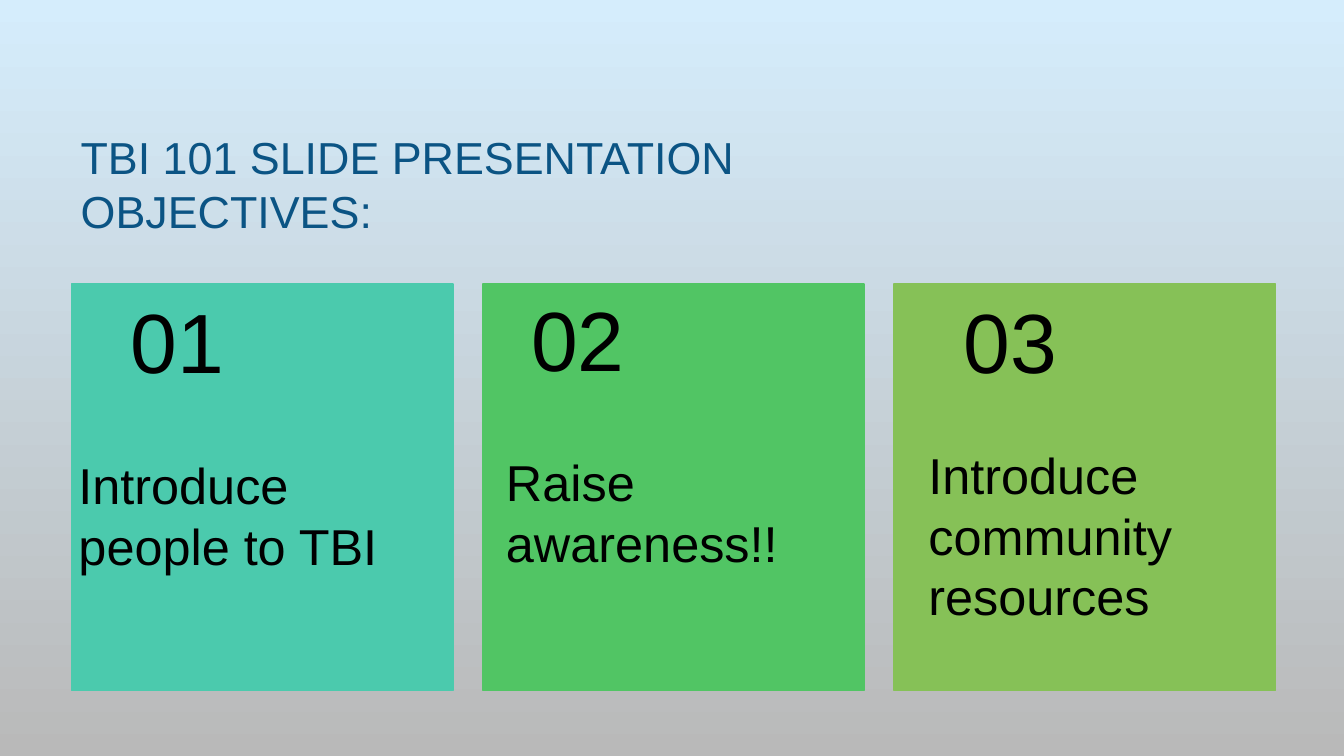
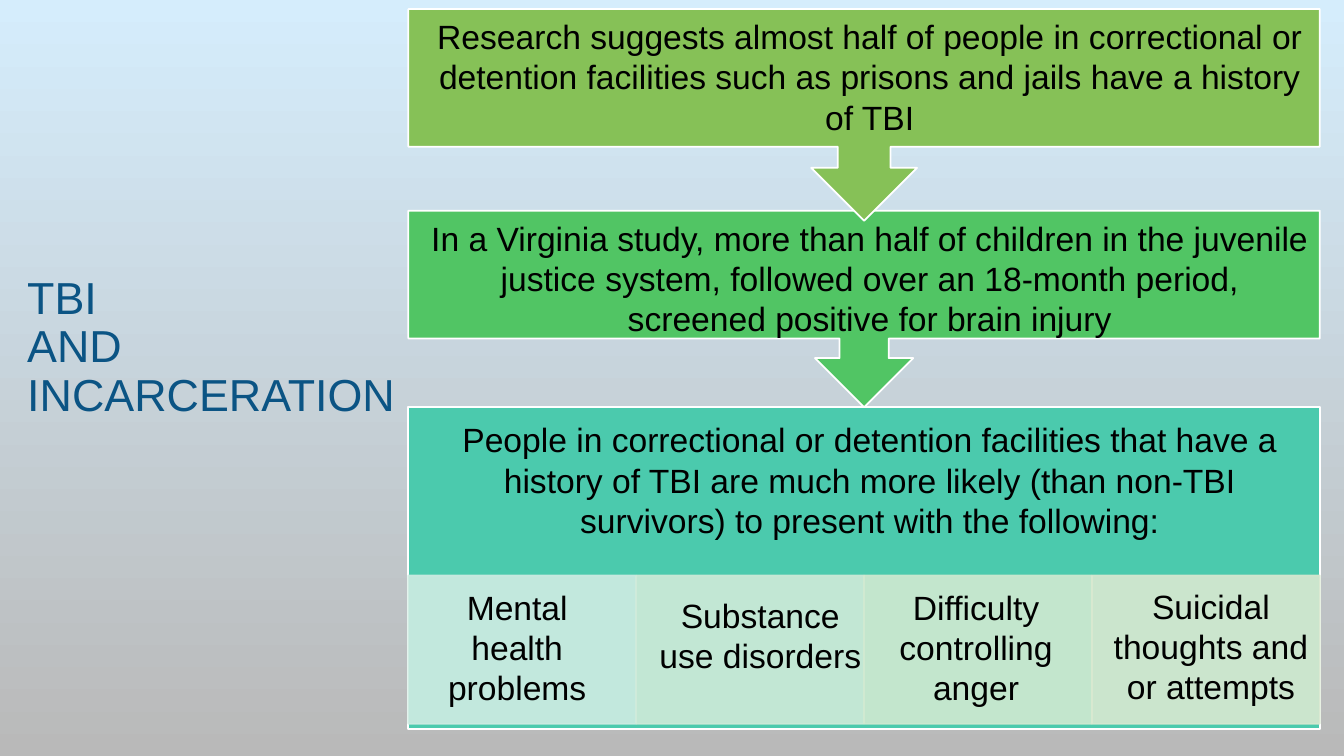
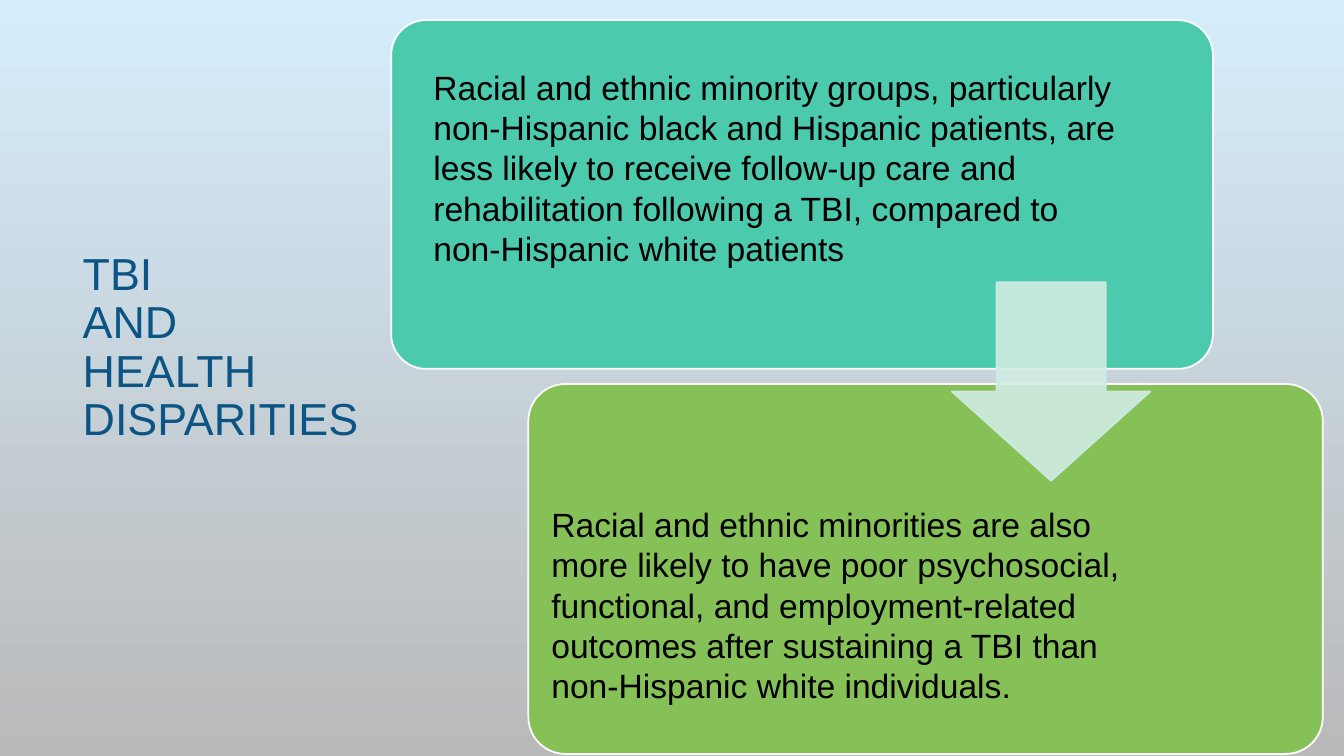
import pptx
import pptx.util
import pptx.dml.color
import pptx.enum.shapes
import pptx.enum.text
import pptx.oxml.ns
import lxml.etree

Inches, Pt = pptx.util.Inches, pptx.util.Pt
SHAPE = pptx.enum.shapes.MSO_SHAPE
ALIGN = pptx.enum.text.PP_ALIGN
ANCHOR = pptx.enum.text.MSO_ANCHOR
AUTO = pptx.enum.text.MSO_AUTO_SIZE

# Shared style
FONT = "Arial"
BLUE, BLACK, WHITE = "0B5484", "000000", "FFFFFF"
TEAL, GREEN, LIME = "4BCAAD", "51C564", "86C157"
PALE_TEAL = "D0ECE3"
SKY, GREY = "D5EDFC", "B9B9B9"

# Slide 1: colour, number, number position and width, goal, goal position and width
OBJECTIVES_TITLE = "TBI 101 SLIDE PRESENTATION\nOBJECTIVES:"
OBJECTIVES = [
    (TEAL, "01", (1.2, 2.82, 3.31), "Introduce people to TBI", (0.68, 4.46, 3.78)),
    (GREEN, "02", (5.17, 2.8, 3.69), "Raise awareness!!", (4.92, 4.43, 3.5)),
    (LIME, "03", (9.46, 2.82, 2.97), "Introduce community resources", (9.11, 4.36, 3.33)),
]

# Slide 2
INCARCERATION_TITLE = "TBI\vAND\vINCARCERATION"
FINDINGS = [
    "Research suggests almost half of people in correctional or detention facilities "
    "such as prisons and jails have a history of TBI",
    "In a Virginia study, more than half of children in the juvenile justice system, "
    "followed over an 18-month period, screened positive for brain injury",
    "People in correctional or detention facilities that have a history of TBI are much "
    "more likely (than non-TBI survivors) to present with the following:",
]
CALLOUTS = [(GREEN, 2.09, 1.95), (LIME, 0.09, 2.1)]  # colour, top, height
RISKS = [  # colour, text, text box (left, top, width, height)
    (PALE_TEAL, "Mental health problems", (4.15, 5.77, 1.96, 1.31)),
    ("D0EBD9", "Substance use disorders", (6.38, 5.85, 2.32, 0.91)),
    ("D1EAD1", "Difficulty controlling anger", (8.62, 5.77, 2.12, 1.31)),
    ("D9E9D1", "Suicidal thoughts and or attempts", (10.79, 5.76, 2.44, 1.31)),
]

# Slide 3: colour, panel box, text, text box
DISPARITIES_TITLE = "TBI\vAND\vHEALTH DISPARITIES"
DISPARITIES = [
    (TEAL, (3.88, 0.2, 8.15, 3.46),
     "Racial and ethnic minority groups, particularly non-Hispanic black and Hispanic "
     "patients, are less likely to receive follow-up care and rehabilitation following "
     "a TBI, compared to non-Hispanic white patients", (4.2, 0.61, 6.98, 2.12)),
    (LIME, (5.24, 3.81, 7.88, 3.67),
     "Racial and ethnic minorities are also more likely to have poor psychosocial, "
     "functional, and employment-related outcomes after sustaining a TBI than "
     "non-Hispanic white individuals.", (5.37, 4.95, 6.22, 2.12)),
]


def rgb(color):
    return pptx.dml.color.RGBColor.from_string(color)


def style_text(tf, size, color, align=ALIGN.LEFT, spacing=None):
    tf.word_wrap = True
    for p in tf.paragraphs:
        p.alignment = align
        if spacing:
            p.line_spacing = spacing
        for r in p.runs:
            r.font.name, r.font.size = FONT, Pt(size)
            r.font.color.rgb = rgb(color)


def add_titled_slide(prs, title, box, anchor=ANCHOR.MIDDLE, spacing=0.9):
    s = prs.slides.add_slide(prs.slide_layouts[5])
    sp = s.shapes.title
    sp.left, sp.top, sp.width, sp.height = map(Inches, box)
    tf = sp.text_frame
    tf.text = title
    tf.auto_size, tf.vertical_anchor = AUTO.NONE, anchor
    style_text(tf, 32, BLUE, spacing=spacing)
    return s


def add_text(s, text, box, size=24, align=ALIGN.LEFT):
    tf = s.shapes.add_textbox(*map(Inches, box)).text_frame
    tf.text = text
    tf.auto_size = AUTO.SHAPE_TO_FIT_TEXT
    style_text(tf, size, BLACK, align)


def add_block(s, kind, box, fill, line=WHITE, opacity=100):
    sp = s.shapes.add_shape(kind, *map(Inches, box))
    sp.shadow.inherit = False
    sp.fill.solid()
    sp.fill.fore_color.rgb = rgb(fill)
    sp.line.color.rgb = rgb(line)
    sp.line.width = Pt(1.25)
    if opacity < 100:
        qn = pptx.oxml.ns.qn
        for clr in sp.element.spPr.iter(qn("a:srgbClr")):
            lxml.etree.SubElement(clr, qn("a:alpha")).set("val", str(opacity * 1000))
    return sp


def set_background(prs):
    fill = prs.slide_master.background.fill
    fill.gradient()
    fill.gradient_angle = 270
    for stop, position, color in zip(fill.gradient_stops, (0, 1), (SKY, GREY)):
        stop.position = position
        stop.color.rgb = rgb(color)


def build_objectives(prs):
    s = add_titled_slide(prs, OBJECTIVES_TITLE, (0.7, 1.24, 11.12, 1.18), ANCHOR.TOP, 1.0)
    for i, (color, *_) in enumerate(OBJECTIVES):
        add_block(s, SHAPE.RECTANGLE, (0.71 + i * 4.08, 2.82, 3.78, 4.03), color, color)
    for _, number, number_box, goal, goal_box in OBJECTIVES:
        add_text(s, number, (*number_box, 1.1), 60)
        add_text(s, goal, (*goal_box, 1.31), 36)


def build_incarceration(prs):
    s = add_titled_slide(prs, INCARCERATION_TITLE, (0.17, 0.47, 4.07, 5.97))
    left, width = 4.05, 9.04
    add_block(s, SHAPE.RECTANGLE, (left, 4.04, width, 3.19), TEAL)
    # Row of risks
    cell = width / len(RISKS)
    for i, (color, *_) in enumerate(RISKS):
        add_block(s, SHAPE.RECTANGLE, (left + i * cell, 5.71, cell, 1.47), color, color, 90)
    # Callouts pointing down
    for color, top, height in CALLOUTS:
        sp = add_block(s, SHAPE.UP_ARROW_CALLOUT, (left, top, width, height), color)
        sp.rotation = 180
    # Texts
    for i, finding in enumerate(FINDINGS):
        add_text(s, finding, (4.15, 0.11 + i * 2, 8.95, 1.31), align=ALIGN.CENTER)
    for _, risk, box in RISKS:
        add_text(s, risk, box, align=ALIGN.CENTER)


def build_disparities(prs):
    s = add_titled_slide(prs, DISPARITIES_TITLE, (0.72, 0.47, 3.1, 5.97))
    for color, panel_box, *_ in DISPARITIES:
        add_block(s, SHAPE.ROUNDED_RECTANGLE, panel_box, color).adjustments[0] = 0.1
    arrow = add_block(s, SHAPE.DOWN_ARROW, (9.44, 2.8, 1.97, 1.97), PALE_TEAL, PALE_TEAL, 90)
    arrow.adjustments[0], arrow.adjustments[1] = 0.55, 0.45
    for _, _, text, text_box in DISPARITIES:
        add_text(s, text, text_box)


def main():
    prs = pptx.Presentation()
    prs.slide_width, prs.slide_height = Inches(13.33), Inches(7.5)
    set_background(prs)
    build_objectives(prs)
    build_incarceration(prs)
    build_disparities(prs)
    prs.save("out.pptx")


if __name__ == "__main__":
    main()
